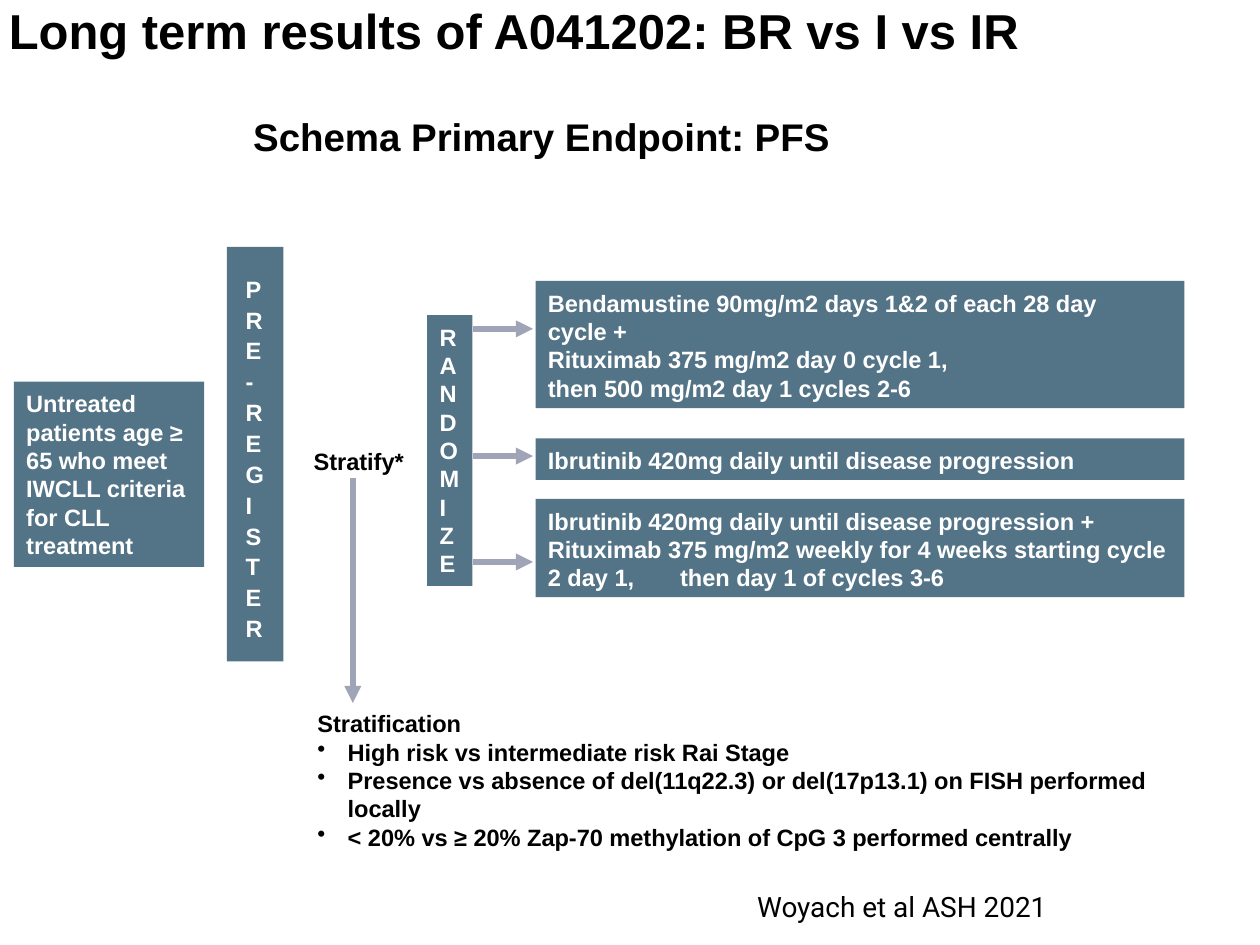
from dataclasses import dataclass
from lxml import etree
from pptx import Presentation
from pptx.dml.color import RGBColor
from pptx.enum.shapes import MSO_CONNECTOR, MSO_SHAPE
from pptx.enum.text import MSO_ANCHOR, PP_ALIGN
from pptx.oxml.ns import qn
from pptx.util import Inches, Pt

RECT = MSO_SHAPE.RECTANGLE
LINE = MSO_CONNECTOR.STRAIGHT
TOP = MSO_ANCHOR.TOP
LEFT = PP_ALIGN.LEFT


@dataclass(frozen=True)
class Theme:
    box: RGBColor = RGBColor(0x53, 0x73, 0x86)
    arrow: RGBColor = RGBColor(0x9F, 0xA4, 0xB7)
    ink: RGBColor = RGBColor(0, 0, 0)
    white: RGBColor = RGBColor(255, 255, 255)
    face: str = "Arial"
    cite: str = "Roboto"
    title: float = 28
    head: float = 22
    body: float = 13.5
    note: float = 16
    stroke: float = 3.25


THEME = Theme()


def write(frame, lines, size, color, face=THEME.face, bold=True,
          pad=(0, 0, 0, 0), pitch=None):
    frame.word_wrap = True
    frame.vertical_anchor = TOP
    (frame.margin_left, frame.margin_top,
     frame.margin_right, frame.margin_bottom) = map(Inches, pad)
    frame.text = "\n".join(lines)
    for para in frame.paragraphs:
        para.alignment = LEFT
        para.space_before = Pt(0)
        if pitch:
            para.line_spacing = pitch
        font = para.font
        font.name, font.size, font.bold = face, Pt(size), bold
        font.color.rgb = color


def add_text(slide, area, lines, size, **style):
    box = slide.shapes.add_textbox(*map(Inches, area))
    write(box.text_frame, lines, size, THEME.ink, **style)
    return box


def add_box(slide, area, lines, pad, pitch=None):
    box = slide.shapes.add_shape(RECT, *map(Inches, area))
    box.shadow.inherit = False
    box.fill.solid()
    box.fill.fore_color.rgb = THEME.box
    box.line.fill.background()
    write(box.text_frame, lines, THEME.body, THEME.white, pad=pad, pitch=pitch)
    return box


def add_arrow(slide, start, end):
    arrow = slide.shapes.add_connector(LINE, *map(Inches, start + end))
    arrow.line.color.rgb = THEME.arrow
    arrow.line.width = Pt(THEME.stroke)
    etree.SubElement(arrow.line._get_or_add_ln(), qn("a:tailEnd"), type="triangle")
    etree.SubElement(arrow._element.spPr, qn("a:effectLst"))


def add_bullet(para):
    props = para._p.get_or_add_pPr()
    props.set("marL", str(Inches(0.24)))
    props.set("indent", str(Inches(-0.24)))
    mark = etree.Element(qn("a:buChar"), char="•")
    props.find(qn("a:defRPr")).addprevious(mark)


def add_tab(para, place):
    tabs = etree.Element(qn("a:tabLst"))
    etree.SubElement(tabs, qn("a:tab"), pos=str(Inches(place)), algn="l")
    para._p.pPr.find(qn("a:defRPr")).addprevious(tabs)


def add_title(slide, text):
    title = slide.shapes.title
    title.left, title.top, title.width, title.height = map(
        Inches, (0.07, -0.02, 9, 0.49))
    write(title.text_frame, [text], THEME.title, THEME.ink, pad=(0, 0.02, 0, 0))


def add_arms(slide):
    arms = [
        (2.23, 1.01, 2.61, 0.3,
         ["Bendamustine 90mg/m2 days 1&2 of each 28 day cycle +",
          "Rituximab 375 mg/m2 day 0 cycle 1,",
          "then 500 mg/m2 day 1 cycles 2-6"]),
        (3.48, 0.33, 3.62, 0.1,
         ["Ibrutinib 420mg daily until disease progression"]),
        (3.96, 0.78, 4.46, 0.1,
         ["Ibrutinib 420mg daily until disease progression + "
          "Rituximab 375 mg/m2 weekly for 4 weeks starting cycle "
          "2 day 1,\tthen day 1 of cycles 3-6"]),
    ]
    for top, high, mid, right, lines in arms:
        box = add_box(slide, (4.25, top, 5.15, high), lines, (0.1, 0.06, right, 0))
        add_arrow(slide, (3.75, mid), (4.23, mid))
    add_tab(box.text_frame.paragraphs[0], 1.05)


def add_strata(slide):
    add_text(slide, (2.48, 3.53, 0.9, 0.25), ["Stratify*"], THEME.body,
             pad=(0.01, 0.02, 0, 0))
    add_arrow(slide, (2.8, 3.79), (2.8, 5.58))
    strata = add_text(slide, (2.51, 5.61, 6.63, 1.2), [
        "Stratification",
        "High risk vs intermediate risk Rai Stage",
        "Presence vs absence of del(11q22.3) or del(17p13.1) on FISH performed locally",
        "< 20% vs ≥ 20% Zap-70 methylation of CpG 3 performed centrally",
    ], THEME.body, pad=(0.01, 0.02, 0, 0))
    for para in strata.text_frame.paragraphs[1:]:
        add_bullet(para)


def main():
    deck = Presentation()
    deck.slide_width, deck.slide_height = Inches(10), Inches(7.5)
    slide = deck.slides.add_slide(deck.slide_layouts[5])
    add_title(slide, "Long term results of A041202: BR vs I vs IR")
    add_text(slide, (2, 0.88, 5, 0.39), ["Schema Primary Endpoint: PFS"],
             THEME.head, pad=(0.01, 0.02, 0, 0))
    add_box(slide, (0.11, 3.03, 1.51, 1.47),
            ["Untreated patients age ≥ 65 who meet IWCLL criteria for CLL treatment"],
            (0.1, 0.06, 0.08, 0))
    add_box(slide, (1.8, 1.96, 0.45, 3.29), ["P R E", "- R E G I S T E R"],
            (0.15, 0.2, 0.12, 0), 1.09)
    add_box(slide, (3.39, 2.5, 0.36, 2.15), ["R A N D O M I Z E"],
            (0.1, 0.06, 0.08, 0))
    add_arms(slide)
    add_strata(slide)
    add_text(slide, (6.01, 7.06, 3, 0.28), ["Woyach et al ASH 2021"],
             THEME.note, face=THEME.cite, bold=False)
    deck.save("out.pptx")


if __name__ == "__main__":
    main()
